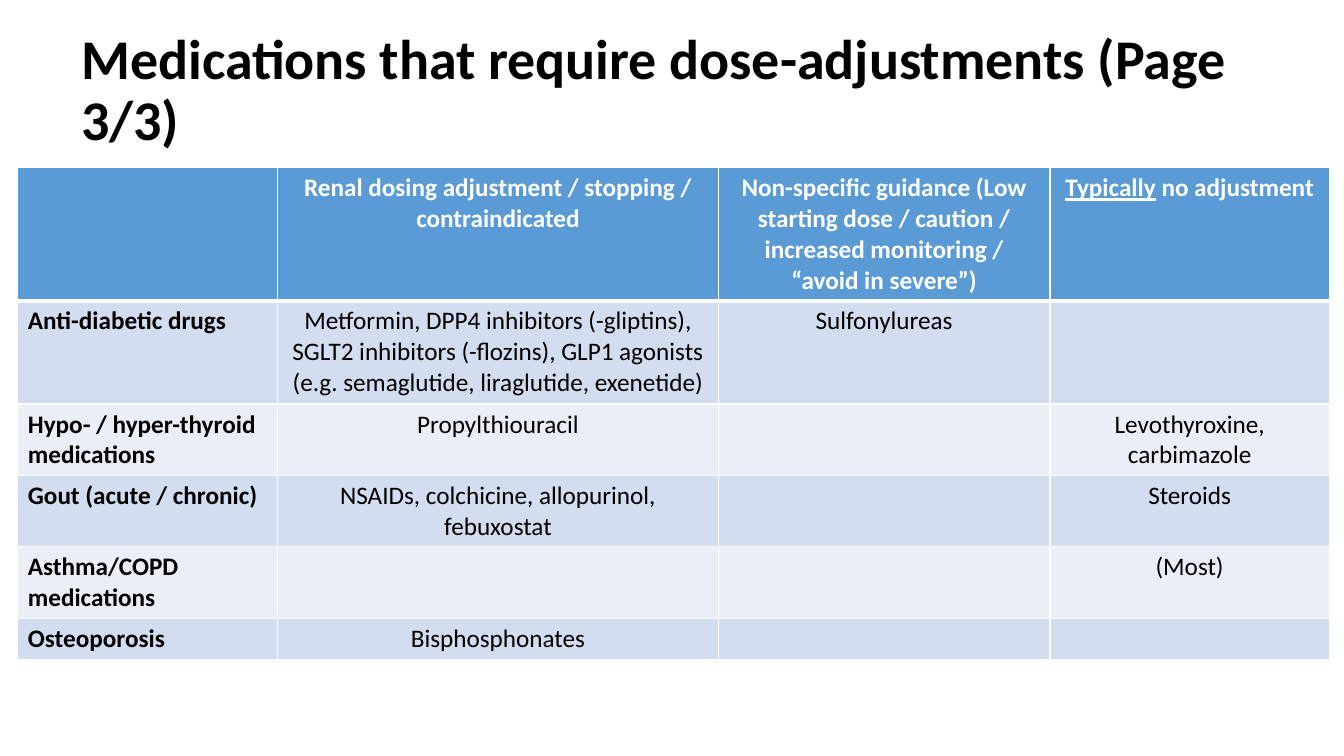
from dataclasses import dataclass

from lxml.etree import SubElement
from pptx import Presentation
from pptx.dml.color import RGBColor
from pptx.enum.text import MSO_ANCHOR, PP_ALIGN
from pptx.oxml.ns import qn
from pptx.slide import Slide
from pptx.table import _Cell
from pptx.util import Cm, Pt

FONT = "Calibri"
COLOURS = {
    "black": "000000",
    "white": "FFFFFF",
    "header": "5B9BD5",
    "odd_row": "D2DEEF",
    "even_row": "EAEFF7",
}
COLUMN_WIDTHS = (6.55, 11.1, 8.36, 7.04)


@dataclass
class DrugRow:
    height: float
    group: str
    adjust: str = ""
    caution: str = ""
    unchanged: str = ""
    underlined: str = ""

    def texts(self) -> tuple[str, ...]:
        return self.group, self.adjust, self.caution, self.unchanged


ROWS = [
    DrugRow(
        3.35, "",
        "Renal dosing adjustment / stopping / contraindicated",
        "Non-specific guidance (Low starting dose / caution / "
        "increased monitoring / “avoid in severe”)",
        " no adjustment",
        underlined="Typically",
    ),
    DrugRow(
        2.6, "Anti-diabetic drugs",
        "Metformin, DPP4 inhibitors (-gliptins), SGLT2 inhibitors (-flozins), "
        "GLP1 agonists (e.g. semaglutide, liraglutide, exenetide)",
        "Sulfonylureas",
    ),
    DrugRow(1.8, "Hypo- / hyper-thyroid medications", "Propylthiouracil",
            unchanged="Levothyroxine, carbimazole"),
    DrugRow(1.8, "Gout (acute / chronic)",
            "NSAIDs, colchicine, allopurinol, febuxostat",
            unchanged="Steroids"),
    DrugRow(1.8, "Asthma/COPD medications", unchanged="(Most)"),
    DrugRow(1.03, "Osteoporosis", "Bisphosphonates"),
]


def style_font(font, size: float, colour: str, bold: bool) -> None:
    font.name = FONT
    font.size = Pt(size)
    font.bold = bold
    font.color.rgb = RGBColor.from_string(COLOURS[colour])


def add_borders(cell: _Cell, top: float, bottom: float) -> None:
    properties = cell._tc.get_or_add_tcPr()
    for side, width in (("L", 1), ("R", 1), ("T", top), ("B", bottom)):
        line = SubElement(properties, qn(f"a:ln{side}"), w=str(Pt(width)))
        fill = SubElement(line, qn("a:solidFill"))
        SubElement(fill, qn("a:srgbClr"), val=COLOURS["white"])


def add_title(slide: Slide, text: str) -> None:
    box = slide.shapes.add_textbox(Cm(1.8), Cm(0.48), Cm(31.67), Cm(3.68))
    frame = box.text_frame
    frame.word_wrap = True
    frame.vertical_anchor = MSO_ANCHOR.MIDDLE
    frame.text = text
    para = frame.paragraphs[0]
    para.line_spacing = 0.9
    style_font(para.runs[0].font, 40, "black", True)


def fill_cell(cell: _Cell, text: str, row: int, column: int, underlined: str) -> None:
    is_header = row == 0
    add_borders(cell, top=3 if row == 1 else 1, bottom=3 if is_header else 1)
    cell.fill.solid()
    fill = "header" if is_header else "odd_row" if row % 2 else "even_row"
    cell.fill.fore_color.rgb = RGBColor.from_string(COLOURS[fill])

    para = cell.text_frame.paragraphs[0]
    para.alignment = PP_ALIGN.CENTER if column else PP_ALIGN.LEFT
    for part in filter(None, (underlined, text)):
        span = para.add_run()
        span.text = part
        style_font(span.font, 18, "white" if is_header else "black",
                   is_header or column == 0)
        span.font.underline = part == underlined


def add_drug_table(slide: Slide) -> None:
    table = slide.shapes.add_table(
        len(ROWS), len(COLUMN_WIDTHS), Cm(0.45), Cm(4.23),
        Cm(sum(COLUMN_WIDTHS)), Cm(sum(row.height for row in ROWS)),
    ).table
    for column, width in zip(table.columns, COLUMN_WIDTHS):
        column.width = Cm(width)
    for row_index, row in enumerate(ROWS):
        table.rows[row_index].height = Cm(row.height)
        for column_index, text in enumerate(row.texts()):
            is_last = column_index == len(COLUMN_WIDTHS) - 1
            fill_cell(table.cell(row_index, column_index), text, row_index,
                      column_index, row.underlined if is_last else "")


def main() -> None:
    deck = Presentation()
    deck.slide_width, deck.slide_height = Cm(33.87), Cm(19.05)
    page = deck.slides.add_slide(deck.slide_layouts[6])

    # Heading
    add_title(page, "Medications that require dose-adjustments (Page 3/3)")

    # Drug groups by kind of adjustment
    add_drug_table(page)

    deck.save("out.pptx")


if __name__ == "__main__":
    main()
